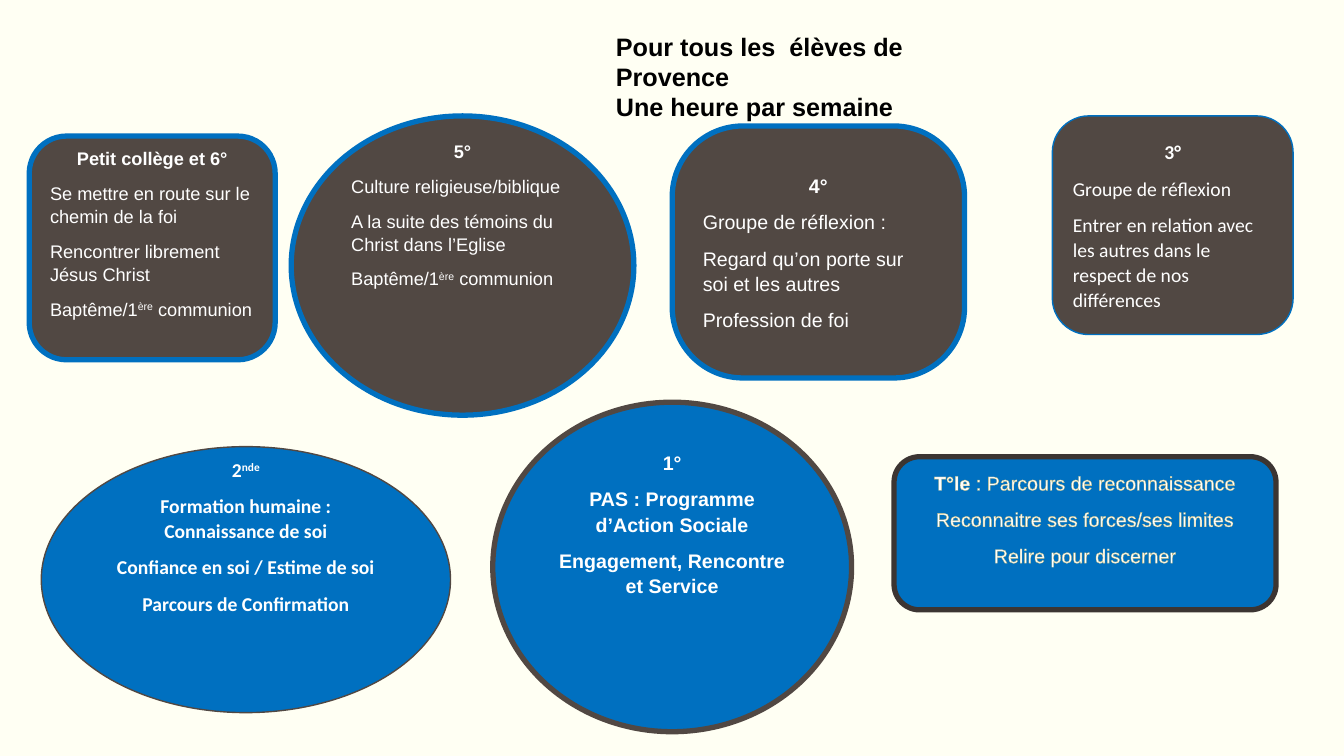
"""Build a slide of the yearly themes offered to each school level."""
from dataclasses import dataclass

from lxml.etree import SubElement
from pptx import Presentation
from pptx.dml.color import RGBColor
from pptx.enum.shapes import MSO_SHAPE
from pptx.enum.text import MSO_ANCHOR, MSO_AUTO_SIZE, PP_ALIGN
from pptx.oxml.ns import qn
from pptx.util import Pt


@dataclass(frozen=True)
class Theme:
    """Colours, fonts and type sizes."""
    cream: str = "FFFFF3"
    brown: str = "514843"
    dark: str = "3C3532"
    blue: str = "0070C0"
    white: str = "FFFFFF"
    black: str = "000000"
    glow: str = "C2BC80"
    sans: str = "Arial"
    round: str = "Calibri"
    title: int = 18
    text: int = 14
    small: int = 13
    thick: float = 3.78
    thin: float = 1


class Deck:
    """Holds the theme and the current slide."""

    def __init__(self, prs, theme):
        """Add a title-only slide with the theme background."""
        self.theme = theme
        self.slide = prs.slides.add_slide(prs.slide_layouts[5])
        fill = self.slide.background.fill
        fill.solid()
        fill.fore_color.rgb = RGBColor.from_string(theme.cream)

    def run(self, p, text, size, font, color, bold=False, sup=False, outline=None):
        """Add one formatted run."""
        r = p.add_run()
        r.text = text
        r.font.size, r.font.name, r.font.bold = Pt(size), font, bold
        r.font.color.rgb = RGBColor.from_string(color)
        rPr = r.font._element
        if sup:
            rPr.set("baseline", "30000")
        if outline:
            ln = SubElement(rPr, qn("a:ln"), w=str(Pt(0.8)))
            fill = SubElement(ln, qn("a:solidFill"))
            SubElement(fill, qn("a:srgbClr"), val=outline)
            rPr.insert(0, ln)

    def title(self, box, lines):
        """Place and fill the title placeholder."""
        t = self.theme
        sp = self.slide.shapes.title
        sp.left, sp.top, sp.width, sp.height = map(Pt, box)
        tf = sp.text_frame
        tf.word_wrap = True
        tf.auto_size = MSO_AUTO_SIZE.NONE
        tf.vertical_anchor = MSO_ANCHOR.TOP
        for i, line in enumerate(lines):
            p = tf.add_paragraph() if i else tf.paragraphs[0]
            p.alignment = PP_ALIGN.LEFT
            self.run(p, line, t.title, t.sans, t.black, bold=True)

    def level(self, kind, box, fill, line, weight, paras, size, font,
              centred=False, below=0, adj=None, outline=None):
        """Add a level shape; runs are (text, style), b for bold and ^ for superscript."""
        sp = self.slide.shapes.add_shape(kind, *map(Pt, box))
        sp.shadow.inherit = False
        if adj:
            sp.adjustments[0] = adj
        sp.fill.solid()
        sp.fill.fore_color.rgb = RGBColor.from_string(fill)
        sp.line.color.rgb = RGBColor.from_string(line)
        sp.line.width = Pt(weight)
        tf = sp.text_frame
        tf.word_wrap = True
        tf.vertical_anchor = MSO_ANCHOR.MIDDLE
        tf.margin_bottom = Pt(3.6 + below)
        for i, runs in enumerate(paras):
            p = tf.add_paragraph() if i else tf.paragraphs[0]
            p.alignment = PP_ALIGN.LEFT if i and not centred else PP_ALIGN.CENTER
            p.line_spacing, p.space_after = 1.07, Pt(8)
            for text, style in runs:
                self.run(p, text, size, font, self.theme.white,
                         "b" in style, "^" in style, outline)


def main():
    """Create the slide and save it."""
    prs = Presentation()
    prs.slide_width, prs.slide_height = Pt(960), Pt(540)
    t = Theme()
    deck = Deck(prs, t)
    rounded, oval = MSO_SHAPE.ROUNDED_RECTANGLE, MSO_SHAPE.OVAL
    college = (t.brown, t.blue)
    lycee = (t.blue, t.brown)
    communion = [("Baptême/1", ""), ("ère", "^"), (" communion", "")]

    deck.title((432.7, 18.7, 263.5, 51),
               ["Pour tous les  élèves de Provence", "Une heure par semaine"])
    deck.level(rounded, (20.9, 97.2, 175.7, 159.8), *college, t.thick, [
        [("Petit collège et 6°", "b")],
        [("Se mettre en route sur le chemin de la foi", "")],
        [("Rencontrer librement Jésus Christ", "")],
        communion,
    ], t.small, t.sans, below=21.5)
    deck.level(oval, (208, 82.8, 244.8, 213.8), *college, t.thick, [
        [("5°", "b")],
        [("Culture religieuse/biblique", "")],
        [("A la suite des témoins du Christ dans l’Eglise", "")],
        communion,
    ], t.small, t.sans, below=73)
    deck.level(rounded, (480.2, 90, 208.8, 180), *college, t.thick, [
        [("4°", "b")],
        [("Groupe de réflexion :", "")],
        [("Regard qu’on porte sur soi et les autres", "")],
        [("Profession de foi", "")],
    ], t.text, t.sans, adj=0.28)
    deck.level(rounded, (751.7, 82.8, 172, 156.2), *college, t.thin, [
        [("3°", "b")],
        [("Groupe de réflexion", "")],
        [("Entrer en relation avec les autres dans le respect de nos différences", "")],
    ], t.text, t.round)
    deck.level(oval, (29.5, 319, 292.3, 190), *lycee, t.thin, [
        [("2", "b"), ("nde", "b^")],
        [("Formation humaine : Connaissance de soi", "b")],
        [("Confiance en soi / Estime de soi", "b")],
        [("Parcours de Confirmation", "b")],
    ], t.text, t.round, centred=True, below=63)
    deck.level(oval, (352, 287.3, 256.3, 235.4), *lycee, t.thick, [
        [("1°", "b")],
        [("PAS : Programme d’Action Sociale", "b")],
        [("Engagement, Rencontre et Service", "b")],
    ], t.text, t.sans, centred=True, below=62)
    deck.level(rounded, (638.6, 326.2, 272.9, 109.4), t.blue, t.dark, t.thick, [
        [("T°le ", "b"), (": Parcours de reconnaissance", "")],
        [("Reconnaitre ses forces/ses limites", "")],
        [("Relire pour discerner", "")],
    ], t.text, t.sans, centred=True, below=21.5, outline=t.glow)
    prs.save("out.pptx")


if __name__ == "__main__":
    main()
